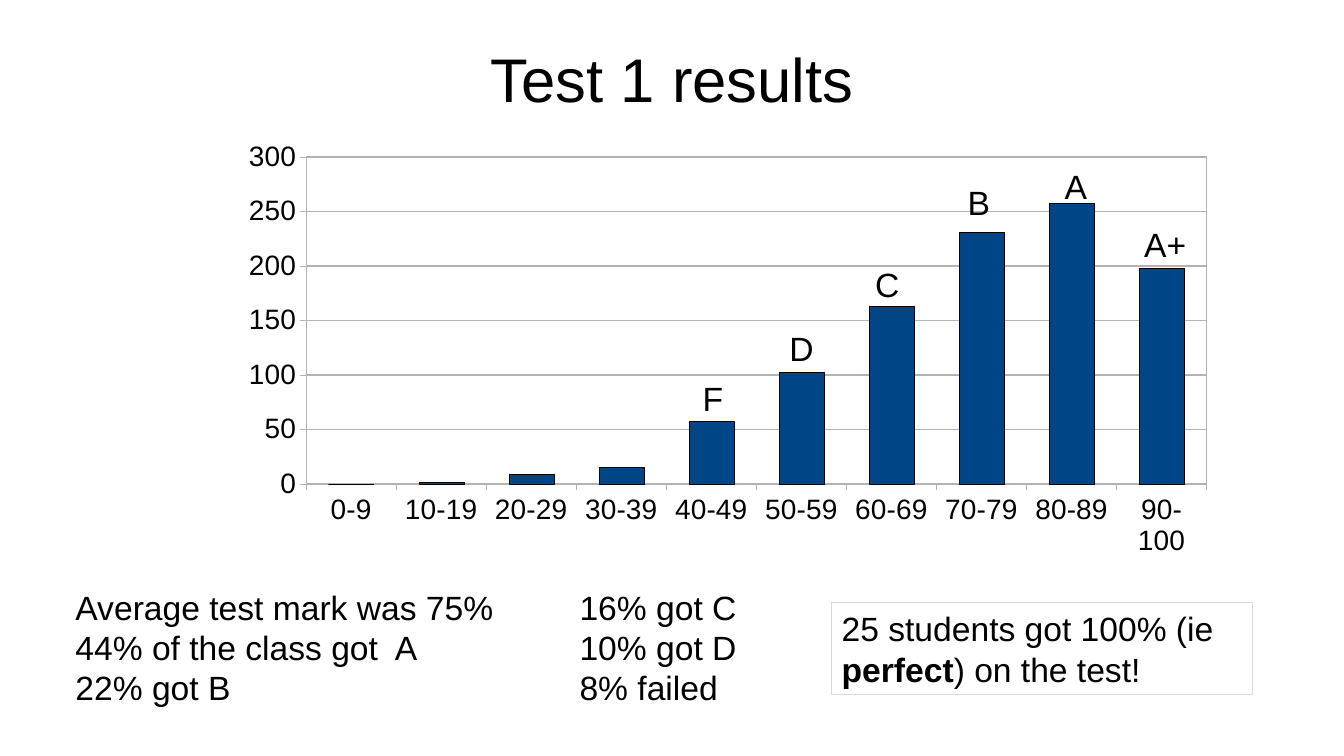
from lxml import etree
from pptx import Presentation
from pptx import util as u
from pptx.chart.data import CategoryChartData
from pptx.dml.color import RGBColor
from pptx.enum import chart as ch, shapes, text
from pptx.oxml import parse_xml
from pptx.oxml.ns import nsdecls, qn

# Content
FONT, BLACK, GREY, BLUE = "Arial", "000000", "B3B3B3", "004586"
TITLE = "Test 1 results"
MARKS = {"0-9": 0, "10-19": 2, "20-29": 9, "30-39": 15, "40-49": 58,
         "50-59": 103, "60-69": 163, "70-79": 231, "80-89": 258, "90-100": 198}
NOTES = [
    ((0.65, 5.77, 4.58, 1.31),
     ["Average test mark was 75%", "44% of the class got  A", "22% got B"]),
    ((5.65, 5.77, 2.02, 1.31), ["16% got C", "10% got D", "8% failed"]),
]
GRADES = [("A", 10.46, 1.6, 0.43), ("A+", 11.25, 2.17, 0.62),
          ("B", 9.5, 1.76, 0.43), ("C", 8.58, 2.57, 0.45),
          ("D", 7.73, 3.2, 0.45), ("F", 6.87, 3.7, 0.41)]
PERFECT = [("25 students got 100% (ie ", False), ("perfect", True),
           (") on the test!", False)]
PLOT = {"x": 0.144, "y": 0.068, "w": 0.837, "h": 0.718}


def color(code):
    return RGBColor.from_string(code)


def box(at):
    return [u.Inches(n) for n in at]


def style(font, size):
    font.name, font.size = FONT, u.Pt(size)
    font.color.rgb = color(BLACK)


def stroke(line, code, width):
    line.color.rgb = color(code)
    line.width = u.Pt(width)


def write(frame, lines, wrap=True):
    frame.word_wrap = wrap
    frame.auto_size = text.MSO_AUTO_SIZE.SHAPE_TO_FIT_TEXT
    frame.text = "\n".join(lines)
    for para in frame.paragraphs:
        style(para.font, 24)


deck = Presentation()
deck.slide_width, deck.slide_height = u.Inches(13.33), u.Inches(7.5)
slide = deck.slides.add_slide(deck.slide_layouts[5])

# Title
title = slide.shapes.title
title.left, title.top, title.width, title.height = box((0.67, 0.3, 12, 0.95))
title.text_frame.text = TITLE
title.text_frame.vertical_anchor = text.MSO_ANCHOR.MIDDLE
head = title.text_frame.paragraphs[0]
head.alignment = text.PP_ALIGN.CENTER
style(head.font, 44)

# Column chart
data = CategoryChartData()
data.categories = list(MARKS)
data.add_series("Series 1", list(MARKS.values()))
chart = slide.shapes.add_chart(ch.XL_CHART_TYPE.COLUMN_CLUSTERED,
                               *box((1.5, 1.25, 10.67, 4.52)), data).chart
chart.has_legend = chart.has_title = False
style(chart.font, 10)
plot = chart.plots[0]
plot.gap_width, plot.vary_by_categories = 100, False
bars = plot.series[0].format
bars.fill.solid()
bars.fill.fore_color.rgb = color(BLUE)
stroke(bars.line, BLACK, 0.25)

# Axes
for axis in (chart.category_axis, chart.value_axis):
    axis.tick_label_position = ch.XL_TICK_LABEL_POSITION.LOW
    axis.major_tick_mark = ch.XL_TICK_MARK.OUTSIDE
    axis.minor_tick_mark = ch.XL_TICK_MARK.NONE
    style(axis.tick_labels.font, 20)
    stroke(axis.format.line, GREY, 0.25)
scale = chart.value_axis
scale.minimum_scale, scale.maximum_scale, scale.major_unit = 0, 300, 50
scale.has_major_gridlines = True
stroke(scale.major_gridlines.format.line, GREY, 1)

# Plot area place and frame
area = plot._element.getparent()
for old in area.findall(qn("c:layout")):
    area.remove(old)
layout = parse_xml(f"<c:layout {nsdecls('c')}><c:manualLayout/></c:layout>")
rules = [("layoutTarget", "inner"), ("xMode", "edge"), ("yMode", "edge")]
for tag, val in rules + list(PLOT.items()):
    etree.SubElement(layout[0], qn("c:" + tag), val=str(val))
area.insert(0, layout)
area.append(parse_xml(
    f'<c:spPr {nsdecls("c", "a")}><a:solidFill><a:srgbClr val="FFFFFF"/>'
    f'</a:solidFill><a:ln w="3175"><a:solidFill><a:srgbClr val="{GREY}"/>'
    '</a:solidFill></a:ln></c:spPr>'))

# Notes under the chart
for at, lines in NOTES:
    write(slide.shapes.add_textbox(*box(at)).text_frame, lines)

# Grade letters over the bars
for grade, left, top, width in GRADES:
    label = slide.shapes.add_textbox(*box((left, top, width, 0.5)))
    write(label.text_frame, [grade], wrap=False)

# Framed remark
frame = slide.shapes.add_shape(shapes.MSO_SHAPE.RECTANGLE,
                               *box((8.25, 5.98, 4.17, 0.91)))
frame.shadow.inherit = False
frame.fill.background()
stroke(frame.line, "D9D9D9", 0.75)
write(frame.text_frame, [""])
para = frame.text_frame.paragraphs[0]
para.alignment = text.PP_ALIGN.LEFT
for words, bold in PERFECT:
    run = para.add_run()
    run.text, run.font.bold = words, bold

deck.save("out.pptx")
